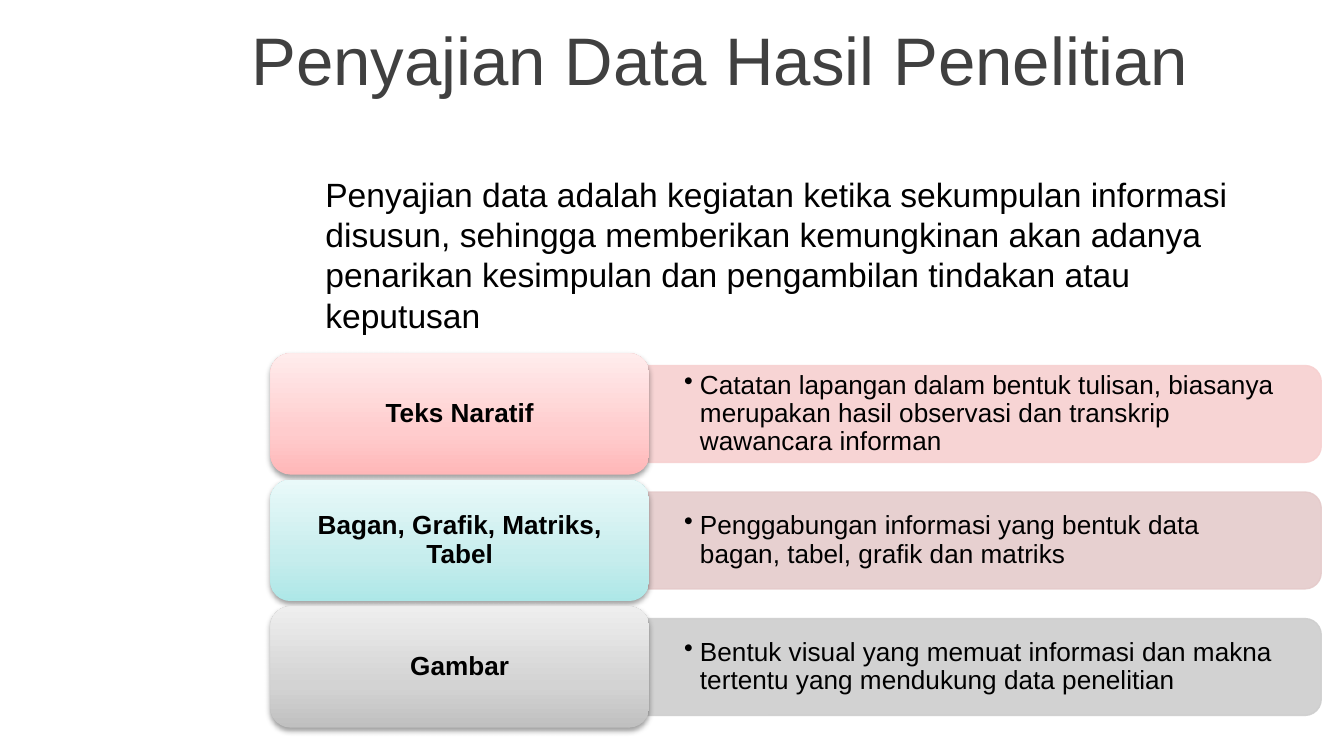
"""Build a slide on presenting research data: title, definition and three labelled forms."""
from lxml.etree import SubElement
from pptx import Presentation
from pptx.dml.color import RGBColor
from pptx.enum.shapes import MSO_SHAPE as Shape
from pptx.enum.text import MSO_ANCHOR as Anchor, MSO_AUTO_SIZE as AutoSize, PP_ALIGN as Align
from pptx.oxml import parse_xml
from pptx.oxml.ns import nsdecls, qn
from pptx.util import Cm, Pt

FONT = "Arial"
BLACK = RGBColor(0x00, 0x00, 0x00)
DARK_GRAY = RGBColor(0x40, 0x40, 0x40)
PINK = RGBColor(0xF7, 0xD0, 0xD0)
ROSE = RGBColor(0xE5, 0xCB, 0xCB)
SILVER = RGBColor(0xCE, 0xCE, 0xCE)

TITLE = "Penyajian Data Hasil Penelitian"
DEFINITION = [
    "Penyajian data adalah kegiatan ketika sekumpulan informasi disusun, "
    "sehingga memberikan kemungkinan akan adanya",
    "penarikan kesimpulan dan pengambilan tindakan atau",
    "keputusan",
]
FORMS = [
    ("Teks Naratif",
     "Catatan lapangan dalam bentuk tulisan, biasanya merupakan hasil observasi "
     "dan transkrip wawancara informan",
     PINK, ("FFB7B8", "FFCCCD", "FFECEC")),
    ("Bagan, Grafik, Matriks, Tabel",
     "Penggabungan informasi yang bentuk data bagan, tabel, grafik dan matriks",
     ROSE, ("ADE7E7", "C6EDED", "E9F9F9")),
    ("Gambar",
     "Bentuk visual yang memuat informasi dan makna tertentu yang mendukung data penelitian",
     SILVER, ("C0C0C0", "D3D3D3", "EEEEEE")),
]
GRADIENT_POSITIONS = (0, 35, 100)

LABEL_LEFT, LABEL_WIDTH, LABEL_HEIGHT = 5.11, 7.16, 2.29
PANEL_LEFT, PANEL_WIDTH, PANEL_HEIGHT = 12.24, 12.73, 1.83
DETAIL_WIDTH, DETAIL_HEIGHT = 12.62, 1.65
FIRST_MIDDLE, ROW_STEP = 7.82, 2.39


def write(shape, lines, size, color=BLACK, bold=False, align=Align.LEFT,
          anchor=Anchor.MIDDLE, spacing=None, margins=(0.25, 0.13)):
    frame = shape.text_frame
    frame.text = "\n".join(lines)
    frame.word_wrap = True
    frame.vertical_anchor = anchor
    frame.margin_left = frame.margin_right = Cm(margins[0])
    frame.margin_top = frame.margin_bottom = Cm(margins[1])
    for paragraph in frame.paragraphs:
        paragraph.alignment = align
        if spacing:
            paragraph.line_spacing = spacing
        for run in paragraph.runs:
            run.font.name, run.font.size = FONT, Pt(size)
            run.font.bold, run.font.color.rgb = bold, color
    return frame


def add_panel(slide, middle, color):
    center = PANEL_LEFT + PANEL_WIDTH / 2
    panel = slide.shapes.add_shape(
        Shape.ROUND_2_SAME_RECTANGLE, Cm(center - PANEL_HEIGHT / 2),
        Cm(middle - PANEL_WIDTH / 2), Cm(PANEL_HEIGHT), Cm(PANEL_WIDTH))
    panel.rotation = 90
    panel.shadow.inherit = False
    panel.fill.solid()
    panel.fill.fore_color.rgb = color
    panel.line.color.rgb = color
    panel.line.width = Pt(0.75)
    for color_element in panel._element.spPr.iter(qn("a:srgbClr")):
        SubElement(color_element, qn("a:alpha"), val="90000")


def add_detail(slide, middle, text):
    box = slide.shapes.add_textbox(Cm(PANEL_LEFT), Cm(middle - DETAIL_HEIGHT / 2),
                                   Cm(DETAIL_WIDTH), Cm(DETAIL_HEIGHT))
    frame = write(box, [text], 14, spacing=0.9, margins=(0.69, 0.36))
    properties = frame.paragraphs[0]._p.get_or_add_pPr()
    properties.set("marL", str(Cm(0.3)))
    properties.set("indent", str(Cm(-0.3)))
    SubElement(properties, qn("a:buChar"), char="•")


def add_label(slide, middle, text, colors):
    label = slide.shapes.add_shape(
        Shape.ROUNDED_RECTANGLE, Cm(LABEL_LEFT), Cm(middle - LABEL_HEIGHT / 2),
        Cm(LABEL_WIDTH), Cm(LABEL_HEIGHT))
    label.line.fill.background()
    label.fill.gradient()
    label.fill.gradient_angle = 90
    stops = label._element.spPr.find(qn("a:gradFill")).find(qn("a:gsLst"))
    for stop in list(stops):
        stops.remove(stop)
    for position, color in zip(GRADIENT_POSITIONS, colors):
        stop = SubElement(stops, qn("a:gs"), pos=str(position * 1000))
        SubElement(stop, qn("a:srgbClr"), val=color)
    label._element.spPr.append(parse_xml(
        f'<a:effectLst {nsdecls("a")}>'
        f'<a:outerShdw blurRad="{Pt(3.1)}" dist="{Pt(1.6)}" dir="5400000" rotWithShape="0">'
        '<a:srgbClr val="000000"><a:alpha val="38000"/></a:srgbClr>'
        '</a:outerShdw></a:effectLst>'))
    write(label, [text], 14, bold=True, align=Align.CENTER, spacing=0.9, margins=(0.26, 0.19))


def main():
    presentation = Presentation()
    presentation.slide_width, presentation.slide_height = Cm(25.4), Cm(14.28)
    slide = presentation.slides.add_slide(presentation.slide_layouts[5])

    title = slide.shapes.title
    title.left, title.top, title.width, title.height = Cm(4.5), Cm(0.3), Cm(20.9), Cm(1.6)
    write(title, [TITLE], 36, DARK_GRAY).auto_size = AutoSize.NONE

    definition = slide.shapes.add_textbox(Cm(5.9), Cm(3.15), Cm(17.75), Cm(3.33))
    frame = write(definition, DEFINITION, 18, anchor=Anchor.TOP)
    frame.auto_size = AutoSize.SHAPE_TO_FIT_TEXT

    for row, (name, detail, panel_color, label_colors) in enumerate(FORMS):
        middle = FIRST_MIDDLE + row * ROW_STEP
        add_panel(slide, middle, panel_color)
        add_detail(slide, middle, detail)
        add_label(slide, middle, name, label_colors)

    presentation.save("out.pptx")


if __name__ == "__main__":
    main()
